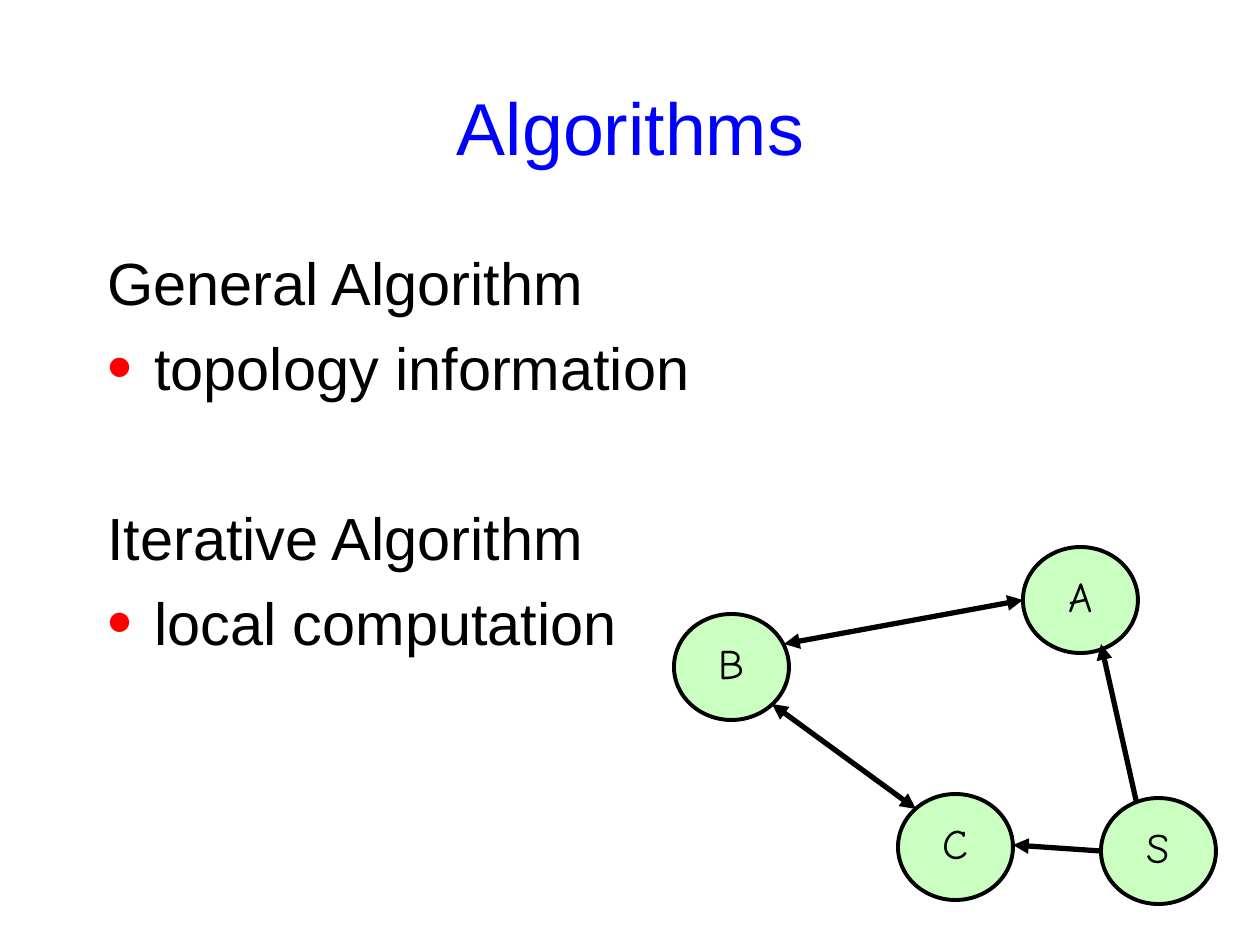
import pptx
import pptx.util
import pptx.dml.color
import pptx.enum.shapes
import pptx.enum.text
import lxml.etree

EMU_PER_PX = 914400 / 126
THEME = {
    "title": {"name": "Arial", "size": 42, "color": "0000FF"},
    "body": {"name": "Arial", "size": 34, "color": "000000"},
    "node": {"name": "Comic Neue", "size": 24, "color": "000000"},
    "bullet": "FF0000", "fill": "CBFFC1", "line": "000000",
    "node_width": 2.25, "edge_width": 3,
}
RGB = pptx.dml.color.RGBColor.from_string
Pt = pptx.util.Pt
ALIGN = pptx.enum.text.PP_ALIGN
ANCHOR = pptx.enum.text.MSO_ANCHOR


def px(*values):
    return [pptx.util.Emu(round(v * EMU_PER_PX)) for v in values]


def write(p, text, style, **formats):
    r = p.add_run()
    r.text = text
    r.font.name = style["name"]
    r.font.size = Pt(style["size"])
    r.font.color.rgb = RGB(style["color"])
    for key, value in formats.items():
        setattr(p, key, value)


prs = pptx.Presentation()
prs.slide_width, prs.slide_height = px(1260, 945)
s = prs.slides.add_slide(prs.slide_layouts[6])

# Title
tf = s.shapes.add_textbox(*px(95, 42, 1071, 157)).text_frame
title_frame = {"word_wrap": True, "vertical_anchor": ANCHOR.MIDDLE, "margin_top": px(17)[0]}
for key, value in title_frame.items():
    setattr(tf, key, value)
write(tf.paragraphs[0], "Algorithms", THEME["title"], alignment=ALIGN.CENTER)

# Body: text, space before in points, bulleted or not
tf = s.shapes.add_textbox(*px(95, 234, 1071, 606)).text_frame
for key, value in {"word_wrap": True, "margin_top": px(12)[0]}.items():
    setattr(tf, key, value)
lines = [
    ("General Algorithm", 0, False),
    ("topology information", 8, True),
    ("Iterative Algorithm", 56, False),
    ("local computation", 8, True),
]
for i, (text, space, bulleted) in enumerate(lines):
    p = tf.add_paragraph() if i else tf.paragraphs[0]
    write(p, text, THEME["body"], space_before=Pt(space))
    if bulleted:
        pPr = p._p.get_or_add_pPr()
        indent = px(47)[0]
        pPr.set("marL", str(indent))
        pPr.set("indent", str(-indent))
        color = pptx.oxml.ns.qn("a:buClr")
        clr = lxml.etree.SubElement(pPr, color)
        lxml.etree.SubElement(clr, pptx.oxml.ns.qn("a:srgbClr"), val=THEME["bullet"])
        lxml.etree.SubElement(pPr, pptx.oxml.ns.qn("a:buSzPct"), val="120000")
        lxml.etree.SubElement(pPr, pptx.oxml.ns.qn("a:buFont"), typeface="Arial")
        lxml.etree.SubElement(pPr, pptx.oxml.ns.qn("a:buChar"), char="•")

# Graph nodes
nodes = {"B": (674, 614), "C": (898, 794), "A": (1023, 547), "S": (1101, 798)}
node_frame = {"word_wrap": False, "vertical_anchor": ANCHOR.TOP, "margin_top": px(8)[0]}
for name, (x, y) in nodes.items():
    sp = s.shapes.add_shape(pptx.enum.shapes.MSO_SHAPE.OVAL, *px(x, y, 115, 106))
    sp.shadow.inherit = False
    sp.fill.solid()
    sp.fill.fore_color.rgb = RGB(THEME["fill"])
    sp.line.color.rgb = RGB(THEME["line"])
    sp.line.width = Pt(THEME["node_width"])
    for key, value in node_frame.items():
        setattr(sp.text_frame, key, value)
    write(sp.text_frame.paragraphs[0], name, THEME["node"], alignment=ALIGN.CENTER)

# Graph edges: end points, arrowheads
edges = [
    ((784, 644, 1023, 600), ("headEnd", "tailEnd")),
    ((772, 704, 916, 809), ("headEnd", "tailEnd")),
    ((1101, 644, 1138, 809), ("headEnd",)),
    ((1013, 845, 1101, 851), ("headEnd",)),
]
for ends, arrows in edges:
    c = s.shapes.add_connector(pptx.enum.shapes.MSO_CONNECTOR.STRAIGHT, *px(*ends))
    c.line.color.rgb = RGB(THEME["line"])
    c.line.width = Pt(THEME["edge_width"])
    ln = c.line._get_or_add_ln()
    for arrow in arrows:
        lxml.etree.SubElement(ln, pptx.oxml.ns.qn("a:" + arrow), type="triangle")
    lxml.etree.SubElement(c._element.spPr, pptx.oxml.ns.qn("a:effectLst"))

# The source node covers the ends of its edges
s.shapes._spTree.append(sp._element)

prs.save("out.pptx")
